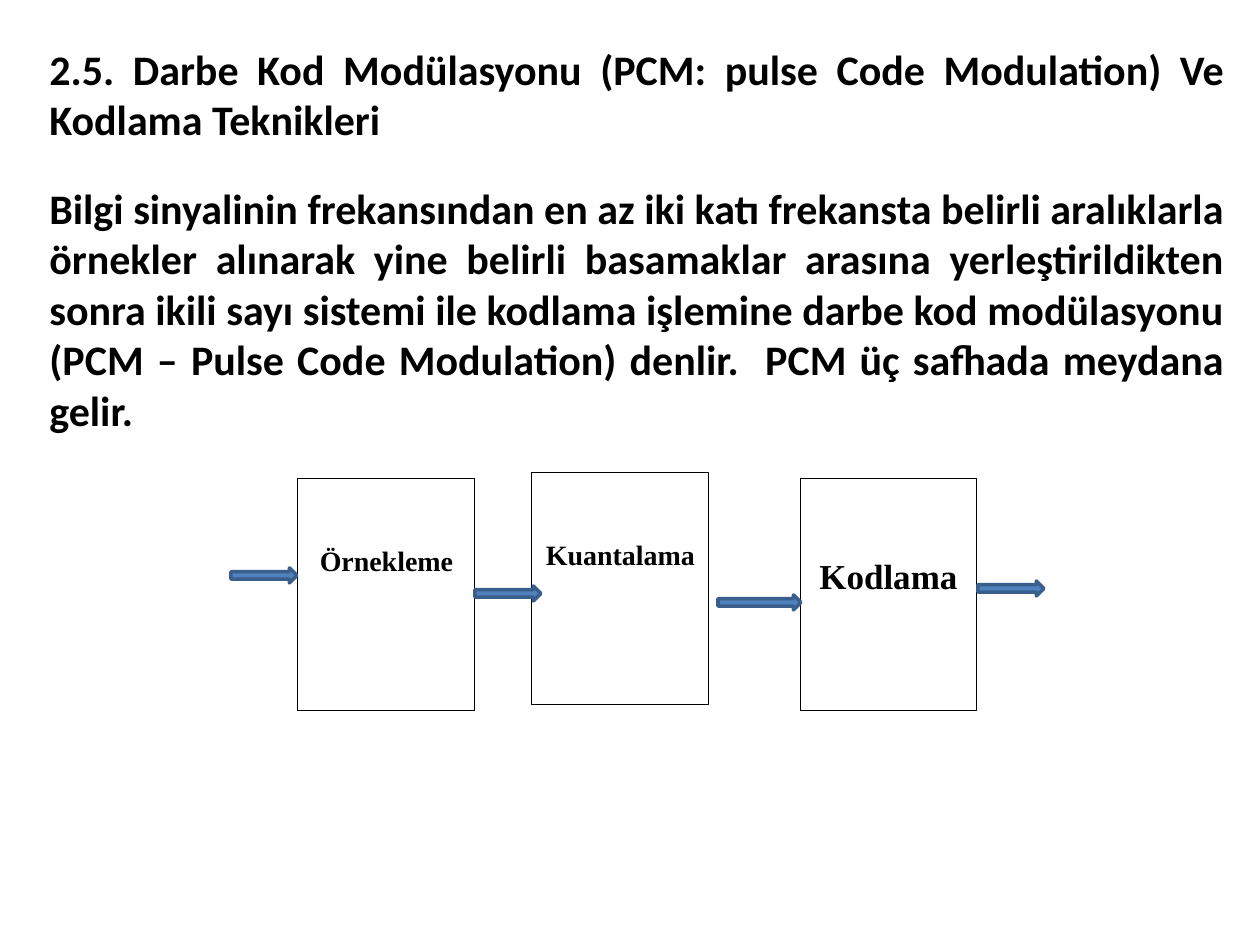
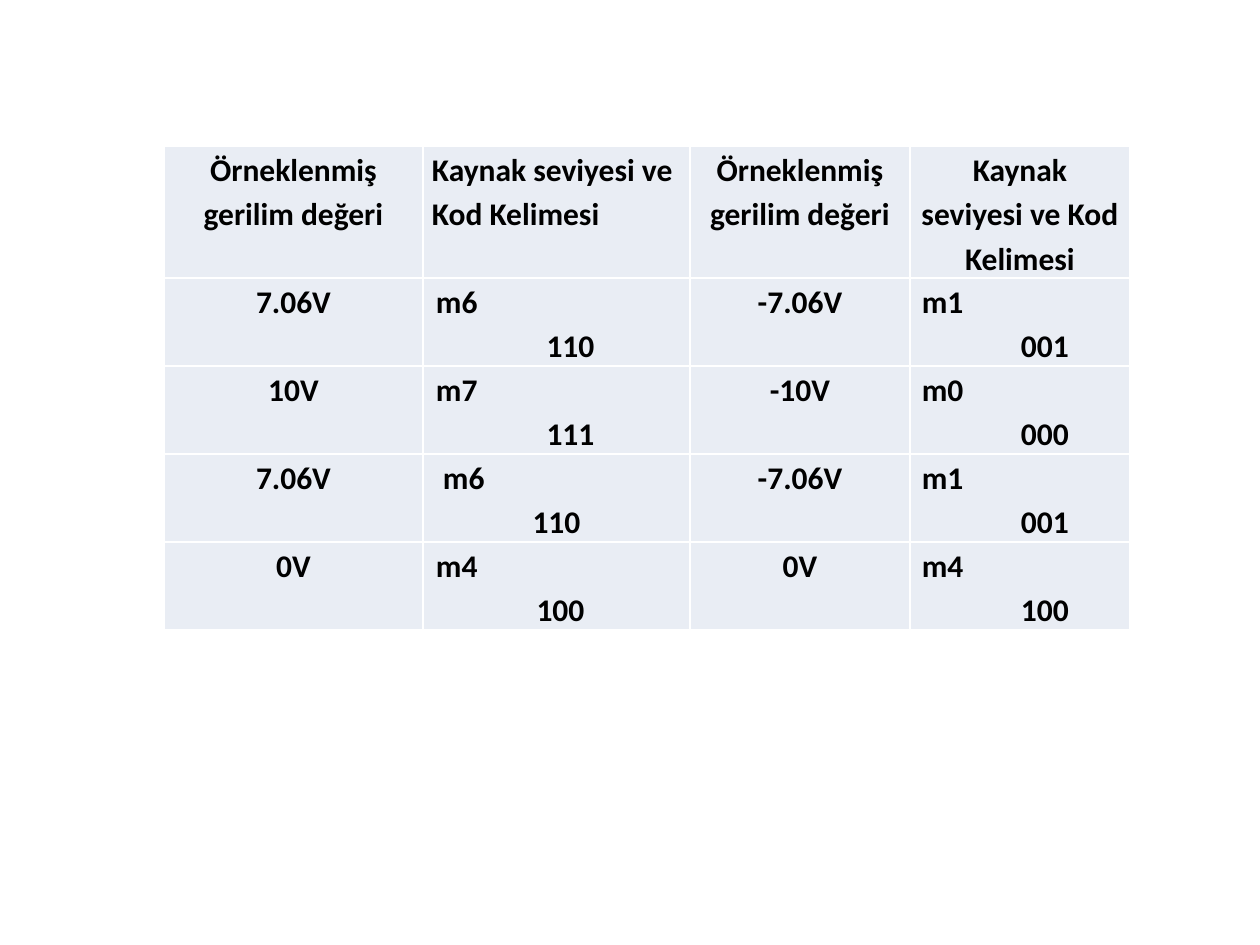
from lxml.etree import SubElement
from pptx import Presentation
from pptx.dml.color import RGBColor
from pptx.enum.shapes import MSO_SHAPE
from pptx.enum.text import MSO_ANCHOR, PP_ALIGN
from pptx.oxml import parse_xml
from pptx.oxml.ns import nsdecls, qn
from pptx.util import Emu, Pt

INK = {"text": "000000", "paper": "FFFFFF", "arrow": "4F81BD",
       "edge": "3A5F8C", "cell": "E9EDF4"}
SANS, SERIF = "Calibri", "Times New Roman"

INTRO = [
    "2.5. Darbe Kod Modülasyonu (PCM: pulse Code Modulation) Ve Kodlama Teknikleri",
    "Bilgi sinyalinin frekansından en az iki katı frekansta belirli aralıklarla "
    "örnekler alınarak yine belirli basamaklar arasına yerleştirildikten sonra "
    "ikili sayı sistemi ile kodlama işlemine darbe kod modülasyonu (PCM – Pulse "
    "Code Modulation) denlir.  PCM üç safhada meydana gelir.",
]
INTRO_BOX = (37, 37, 1200, 407)

# label, text size, left, top
STAGES = [("Örnekleme", 16, 298, 478), ("Kuantalama", 16, 532, 472),
          ("Kodlama", 20, 800, 478)]
STAGE_W, STAGE_H = 177, 232
# left, top, width
ARROWS = [(475, 586, 66), (718, 595, 83), (231, 568, 66), (978, 581, 66)]
ARROW_H = 15

VOLT, CODE = "Örneklenmiş gerilim değeri", "Kaynak seviyesi ve Kod Kelimesi"
HEAD = [VOLT, CODE, VOLT, CODE]
# a code cell holds: level, code word, indent of the level, indent of the code
ROWS = [
    ["7.06V", ("m6", "110", 4, 28), "-7.06V", ("m1", "001", 3, 50)],
    ["10V", ("m7", "111", 4, 28), "-10V", ("m0", "000", 3, 50)],
    ["7.06V", ("m6", "110", 11, 0), "-7.06V", ("m1", "001", 3, 50)],
    ["0V", ("m4", "100", 4, 8), "0V", ("m4", "100", 3, 50)],
]
TABLE_AT = (164, 146)
COLS = [259, 267, 220, 220]
HEAD_H, ROW_H = 132, 88


def px(n):
    return Emu(round(n * 914400 / 126))


def tint(name):
    return RGBColor.from_string(INK[name])


def style(par, size, face, align, spacing=None):
    par.alignment = align
    par.line_spacing = spacing
    font = par.font
    font.size, font.name, font.bold = Pt(size), face, True
    font.color.rgb = tint("text")


def add_form(slide, kind, box, fill, line, width):
    form = slide.shapes.add_shape(kind, *map(px, box))
    form.shadow.inherit = False
    form.fill.solid()
    form.fill.fore_color.rgb = tint(fill)
    form.line.color.rgb = tint(line)
    form.line.width = Pt(width)
    return form


def add_intro(slide):
    frame = slide.shapes.add_textbox(*map(px, INTRO_BOX)).text_frame
    frame.word_wrap = True
    for i, text in enumerate(INTRO):
        par = frame.add_paragraph() if i else frame.paragraphs[0]
        par.text = text
        style(par, 24, SANS, PP_ALIGN.JUSTIFY)
        if i:
            par.space_before = Pt(22)


def add_stage(slide, label, size, left, top):
    form = add_form(slide, MSO_SHAPE.RECTANGLE, (left, top, STAGE_W, STAGE_H),
                    "paper", "text", 0.5)
    frame = form.text_frame
    frame.vertical_anchor = MSO_ANCHOR.TOP
    frame.margin_top = Pt(13.6 + size * 1.32)  # label sits one line down
    par = frame.paragraphs[0]
    par.text = label
    style(par, size, SERIF, PP_ALIGN.CENTER, 1.15)


def add_rules(cell):
    """Draw white rules on the four sides of a cell."""
    props = cell._tc.get_or_add_tcPr()
    for i, side in enumerate(("lnL", "lnR", "lnT", "lnB")):
        rule = parse_xml(f'<a:{side} {nsdecls("a")} w="12700"/>')
        fill = SubElement(rule, qn("a:solidFill"))
        SubElement(fill, qn("a:srgbClr")).set("val", INK["paper"])
        props.insert(i, rule)


def fill_cell(cell, item, align):
    cell.fill.solid()
    cell.fill.fore_color.rgb = tint("cell")
    cell.margin_left = cell.margin_right = px(9)
    cell.margin_top = cell.margin_bottom = 0
    add_rules(cell)
    if isinstance(item, str):
        lines = [(item, align, 0)]
    else:
        level, code, inset, shift = item
        lines = [(level, PP_ALIGN.LEFT, inset), (code, PP_ALIGN.CENTER, shift)]
    frame = cell.text_frame
    for i, (text, side, indent) in enumerate(lines):
        par = frame.add_paragraph() if i else frame.paragraphs[0]
        par.text = text
        style(par, 18, SANS, side, 1.15)
        par._p.get_or_add_pPr().set("marL", str(px(indent)))


def add_codes(slide):
    rows = [HEAD] + ROWS
    highs = [HEAD_H] + [ROW_H] * len(ROWS)
    size = (sum(COLS), sum(highs))
    grid = slide.shapes.add_table(len(rows), len(COLS),
                                  *map(px, TABLE_AT + size)).table
    grid.first_row = grid.horz_banding = False
    for col, wide in zip(grid.columns, COLS):
        col.width = px(wide)
    for r, (row, high) in enumerate(zip(rows, highs)):
        grid.rows[r].height = px(high)
        for c, item in enumerate(row):
            left = r == 0 and c == 1
            fill_cell(grid.cell(r, c), item,
                      PP_ALIGN.LEFT if left else PP_ALIGN.CENTER)


def main():
    deck = Presentation()
    deck.slide_width, deck.slide_height = px(1260), px(945)
    blank = deck.slide_layouts[6]

    steps = deck.slides.add_slide(blank)
    add_intro(steps)
    for stage in STAGES:
        add_stage(steps, *stage)
    for left, top, wide in ARROWS:
        add_form(steps, MSO_SHAPE.RIGHT_ARROW, (left, top, wide, ARROW_H),
                 "arrow", "edge", 2)

    add_codes(deck.slides.add_slide(blank))
    deck.save("out.pptx")


if __name__ == "__main__":
    main()
